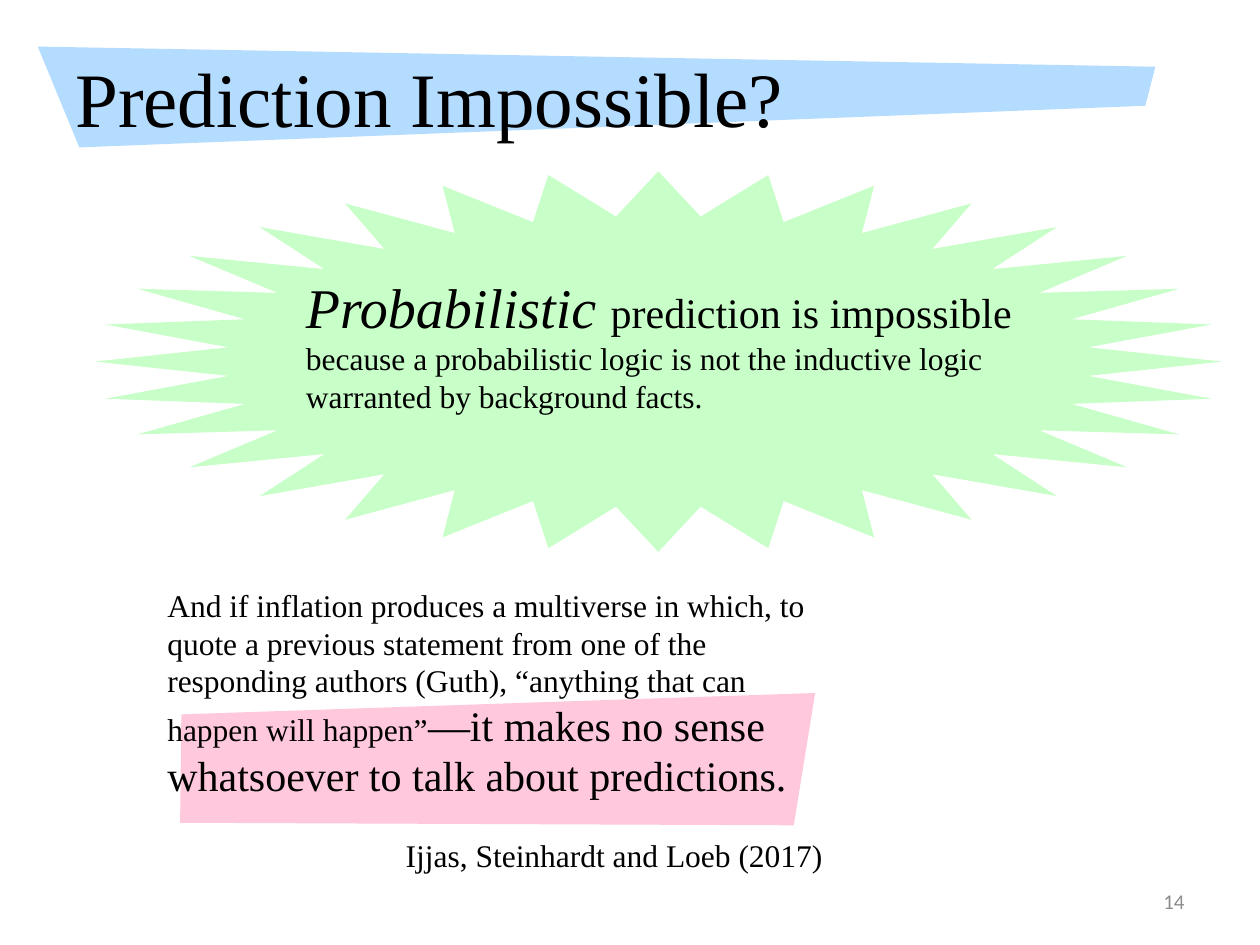
from dataclasses import dataclass

from pptx import Presentation
from pptx.dml.color import RGBColor
from pptx.enum.shapes import MSO_SHAPE
from pptx.enum.text import MSO_ANCHOR, PP_ALIGN
from pptx.util import Inches, Pt


@dataclass(frozen=True)
class Theme:
    ink: str = "000000"
    muted: str = "8C8C8C"
    blue: str = "B4DCFF"
    green: str = "C8FFC8"
    pink: str = "FFC8DC"
    serif: str = "Times New Roman"
    sans: str = "Calibri"
    title: int = 44
    emphasis: int = 32
    strong: int = 24
    body: int = 18
    small: int = 12


THEME = Theme()


@dataclass(frozen=True)
class Box:
    left: float
    top: float
    width: float
    height: float

    def inner(self, dx, dy, width, height):
        return Box(self.left + dx, self.top + dy, width, height)

    def lengths(self):
        return [Inches(v) for v in (self.left, self.top, self.width, self.height)]


def paint(shape, color):
    shape.shadow.inherit = False
    shape.fill.solid()
    shape.fill.fore_color.rgb = RGBColor.from_string(color)
    shape.line.fill.background()


def add_patch(shapes, box, corners, color):
    """Draw a filled polygon whose corners are offsets within the box."""
    points = [(Inches(box.left + x), Inches(box.top + y)) for x, y in corners]
    builder = shapes.build_freeform(*points[0])
    builder.add_line_segments(points[1:], close=True)
    paint(builder.convert_to_shape(), color)


def add_frame(shapes, box, anchor=MSO_ANCHOR.TOP):
    frame = shapes.add_textbox(*box.lengths()).text_frame
    frame.word_wrap = True
    frame.vertical_anchor = anchor
    return frame


def add_text(paragraph, text, size=THEME.body, font=THEME.serif,
             color=THEME.ink, italic=False):
    run = paragraph.add_run()
    run.text = text
    run.font.size = Pt(size)
    run.font.name = font
    run.font.italic = italic
    run.font.color.rgb = RGBColor.from_string(color)


def add_title(shapes, box):
    corners = [(0, 0), (8.87, 0.16), (8.79, 0.47), (0.33, 0.8)]
    add_patch(shapes, box, corners, THEME.blue)
    frame = add_frame(shapes, box.inner(0.2, -0.07, 8.37, 0.94), MSO_ANCHOR.MIDDLE)
    add_text(frame.paragraphs[0], "Prediction Impossible?", size=THEME.title)


def add_page_number(shapes, box, number):
    paragraph = add_frame(shapes, box, MSO_ANCHOR.MIDDLE).paragraphs[0]
    paragraph.alignment = PP_ALIGN.RIGHT
    add_text(paragraph, str(number), size=THEME.small, font=THEME.sans,
             color=THEME.muted)


def add_quotation(shapes, box):
    # Highlight behind the closing words
    corners = [(0.2, 1.93), (0.21, 1.07), (5.24, 0.9), (5.07, 1.95)]
    add_patch(shapes, box, corners, THEME.pink)

    # Quotation and its source
    frame = add_frame(shapes, box)
    quote = frame.paragraphs[0]
    add_text(quote, "And if inflation produces a multiverse in which, to quote a "
                    "previous statement from one of the responding authors (Guth), "
                    "“anything that can happen will happen”")
    add_text(quote, "—it makes no sense whatsoever to talk about predictions.",
             size=THEME.strong)
    source = frame.add_paragraph()
    source.alignment = PP_ALIGN.RIGHT
    source.space_before = Pt(20.7)
    add_text(source, "Ijjas, Steinhardt and Loeb (2017)")


def add_claim(shapes, box):
    star = shapes.add_shape(MSO_SHAPE.STAR_32_POINT, *box.lengths())
    star.adjustments[0] = 0.383
    paint(star, THEME.green)
    claim = add_frame(shapes, box.inner(1.58, 0.75, 5.93, 1.25)).paragraphs[0]
    add_text(claim, "Probabilistic ", size=THEME.emphasis, italic=True)
    add_text(claim, "prediction is impossible", size=THEME.strong)
    add_text(claim, " because a probabilistic logic is not the inductive logic "
                    "warranted by background facts.")


def main():
    deck = Presentation()
    deck.slide_width, deck.slide_height = Inches(10), Inches(7.5)
    shapes = deck.slides.add_slide(deck.slide_layouts[6]).shapes

    add_title(shapes, Box(0.3, 0.37, 8.87, 0.8))
    add_page_number(shapes, Box(7.17, 6.95, 2.33, 0.4), 14)
    add_quotation(shapes.add_group_shape().shapes, Box(1.23, 4.6, 5.4, 2.42))
    add_claim(shapes.add_group_shape().shapes, Box(0.75, 1.36, 8.95, 3.02))

    deck.save("out.pptx")


if __name__ == "__main__":
    main()
